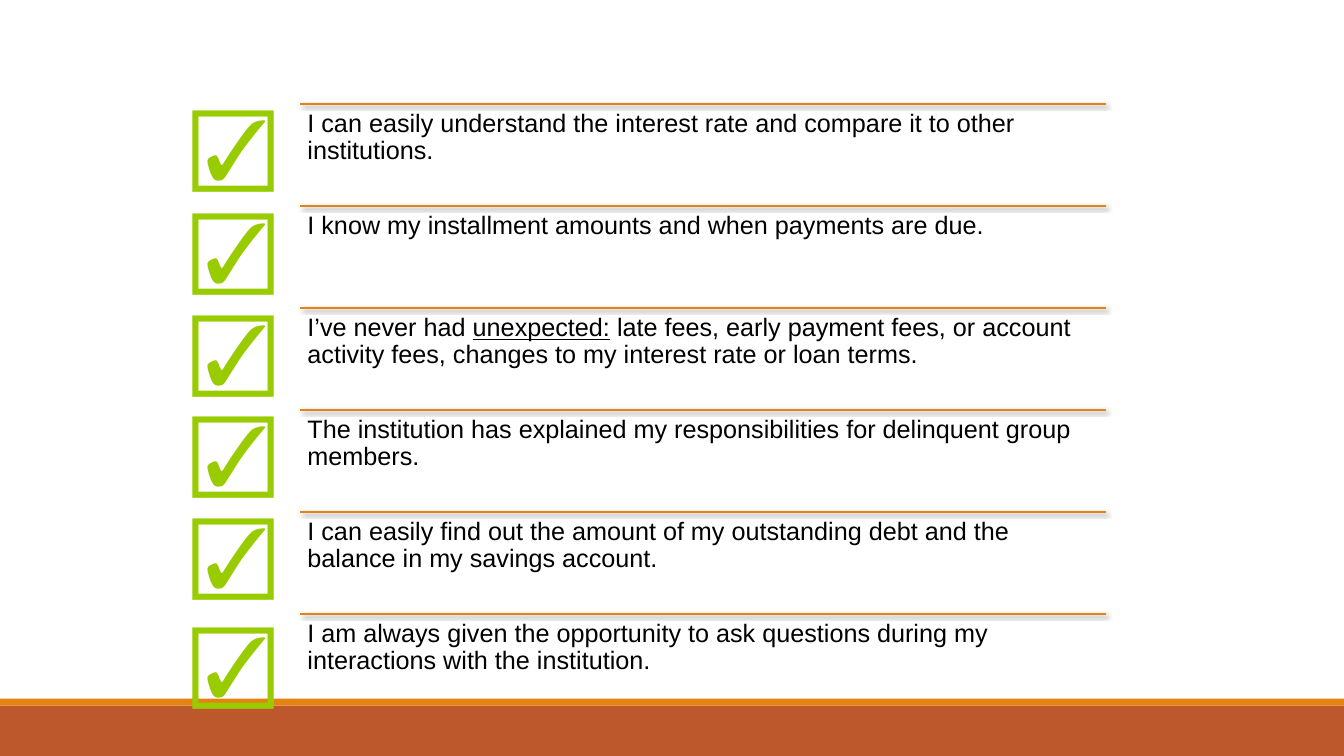
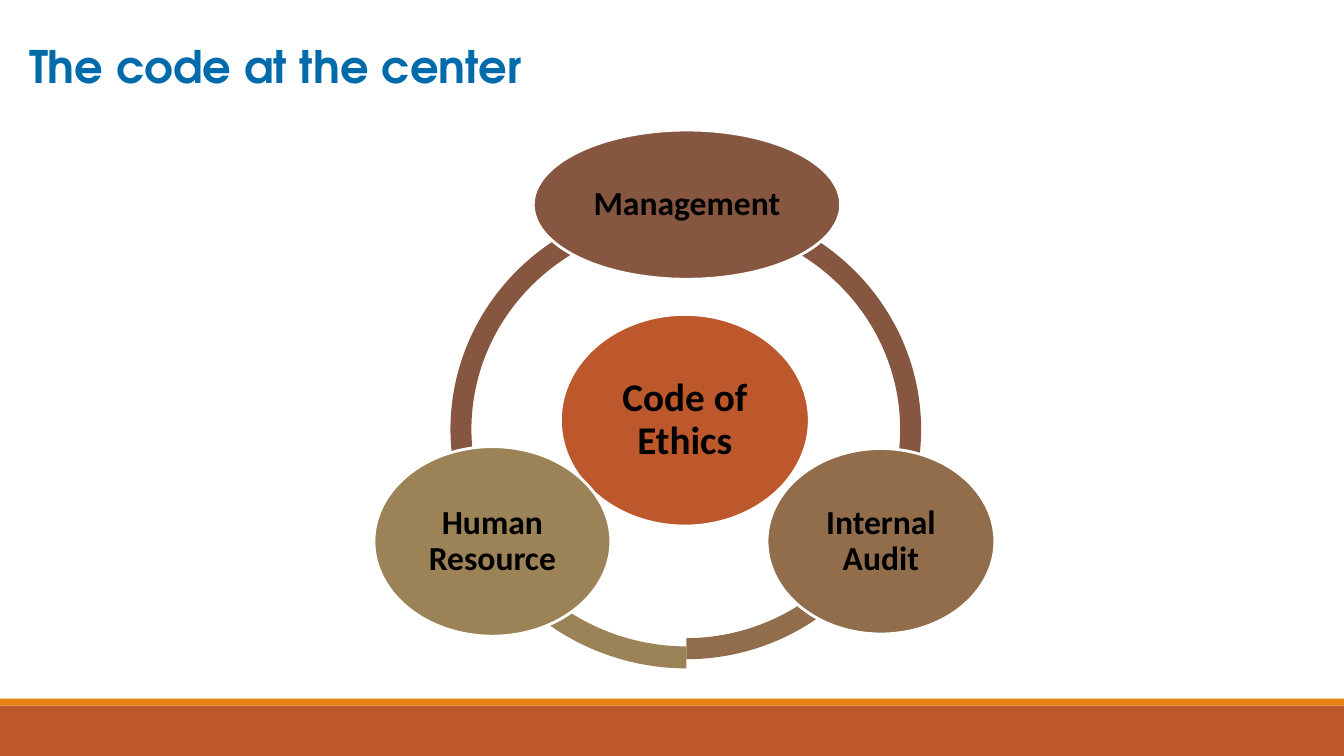
"""Build a borrower checklist slide and a code of ethics diagram slide."""
import dataclasses
import typing

import lxml.etree
import pptx
import pptx.dml.color
import pptx.enum.shapes
import pptx.enum.text
import pptx.oxml.ns
import pptx.presentation
import pptx.shapes.autoshape
import pptx.slide
import pptx.text.text
import pptx.util

Pt = pptx.util.Pt
SHAPES = pptx.enum.shapes.MSO_SHAPE
ANCHOR = pptx.enum.text.MSO_ANCHOR
ALIGN = pptx.enum.text.PP_ALIGN

WIDTH, HEIGHT = 960, 540
BLACK, WHITE = "000000", "FFFFFF"
RUST, ORANGE, GREEN, BLUE = "BD582C", "E48312", "99CC00", "006BAA"
BROWN, TAN, OLIVE = "865640", "916D4B", "9B8357"

ROW_LEFT, ROW_TOP, ROW_WIDTH, ROW_PITCH = 214.6, 74.2, 575.3, 72.86
CHECK_LEFT, CHECK_WIDTH, CHECK_HEIGHT = 130, 68.4, 80


@dataclasses.dataclass(frozen=True)
class Box:
    """Place and size in points."""
    left: float
    top: float
    width: float
    height: float

    def lengths(self) -> list[pptx.util.Length]:
        """Return the four lengths in the order that shapes take them."""
        return [Pt(value) for value in dataclasses.astuple(self)]


@dataclasses.dataclass(frozen=True)
class Span:
    """Run of text, underlined or not."""
    text: str
    underline: bool = False


@dataclasses.dataclass(frozen=True)
class Style:
    """Font of a paragraph."""
    name: str
    size: float
    color: str
    bold: bool = False


@dataclasses.dataclass(frozen=True)
class Statement:
    """Checklist row with the top of its check mark."""
    check_top: float
    spans: tuple[Span, ...]


@dataclasses.dataclass(frozen=True)
class Arc:
    """Ring segment with its start and end in degrees."""
    box: Box
    start: float
    end: float
    color: str


@dataclasses.dataclass(frozen=True)
class Node:
    """Labelled ellipse of the diagram."""
    box: Box
    label: str
    color: str
    size: float = 24
    inset: float = 2


BANDS = ((Box(0, 504, WIDTH, 36), RUST), (Box(0, 499, WIDTH, 5), ORANGE))
TITLE_STYLE = Style("TeX Gyre Adventor", 32, BLUE, True)
ROW_STYLE = Style("Arial", 18, BLACK)
CHECK_STYLE = Style("Arial", 60, GREEN)

STATEMENTS = (
    Statement(61.9, (Span("I can easily understand the interest rate and compare it to other institutions."),)),
    Statement(135.4, (Span("I know my installment amounts and when payments are due."),)),
    Statement(208.1, (
        Span("I’ve never had "),
        Span("unexpected:", True),
        Span(" late fees, early payment fees, or account activity fees, "
             "changes to my interest rate or loan terms."),
    )),
    Statement(280.1, (Span("The institution has explained my responsibilities for delinquent group members."),)),
    Statement(353.5, (Span("I can easily find out the amount of my outstanding debt "
                           "and the balance in my savings account."),)),
    Statement(431.3, (Span("I am always given the opportunity to ask questions "
                           "during my interactions with the institution."),)),
)

ARCS = (
    Arc(Box(319.7, 135.4, 341.3, 342), 90, 162, OLIVE),
    Arc(Box(326.2, 142.6, 328.3, 328.3), 18, 90, TAN),
    Arc(Box(321.8, 144, 336.2, 325.4), 162, 18, BROWN),
)
NODES = (
    Node(Box(400.3, 224.6, 177.8, 151.2), "Code of Ethics", RUST, 28, 3),
    Node(Box(380.9, 92.9, 219.6, 106.6), "Management", BROWN),
    Node(Box(547.9, 320.4, 162.7, 132.5), "Internal Audit", TAN),
    Node(Box(267.1, 319, 169.2, 135.4), "Human Resource", OLIVE),
)


def color_of(value: str) -> pptx.dml.color.RGBColor:
    """Turn a hex string into a colour."""
    return pptx.dml.color.RGBColor.from_string(value)


def set_values(target: typing.Any, values: dict[str, typing.Any]) -> None:
    """Set each named attribute of an object."""
    for name, value in values.items():
        setattr(target, name, value)


def inset_values(inset: float) -> dict[str, pptx.util.Length]:
    """Give all four margins of a text frame one value."""
    return {f"margin_{side}": Pt(inset) for side in ("left", "top", "right", "bottom")}


def write(frame: pptx.text.text.TextFrame, spans: tuple[Span, ...], style: Style,
          frame_values: dict[str, typing.Any], para_values: dict[str, typing.Any]) -> None:
    """Write one paragraph into a text frame."""
    set_values(frame, {"word_wrap": True} | frame_values)
    para = frame.paragraphs[0]
    set_values(para, para_values)
    for span in spans:
        run = para.add_run()
        run.text = span.text
        set_values(run.font, {"name": style.name, "size": Pt(style.size),
                              "bold": style.bold, "underline": span.underline})
        run.font.color.rgb = color_of(style.color)


def add_text(slide: pptx.slide.Slide, box: Box, spans: tuple[Span, ...], style: Style,
             frame_values: dict[str, typing.Any] | None = None,
             para_values: dict[str, typing.Any] | None = None) -> None:
    """Add a text box with one paragraph."""
    frame = slide.shapes.add_textbox(*box.lengths()).text_frame
    write(frame, spans, style, frame_values or {}, para_values or {})


def add_filled(slide: pptx.slide.Slide, kind: SHAPES, box: Box, color: str,
               outline: str | None = None) -> pptx.shapes.autoshape.Shape:
    """Add a flat shape, outlined when an outline colour is given."""
    shape = slide.shapes.add_shape(kind, *box.lengths())
    shape.shadow.inherit = False
    shape.fill.solid()
    shape.fill.fore_color.rgb = color_of(color)
    if outline:
        shape.line.color.rgb = color_of(outline)
        shape.line.width = Pt(2)
    else:
        shape.line.fill.background()
    return shape


def add_rule(slide: pptx.slide.Slide, left: float, top: float, width: float) -> None:
    """Add a thin horizontal rule with a soft shadow."""
    rule = slide.shapes.add_connector(
        pptx.enum.shapes.MSO_CONNECTOR.STRAIGHT, Pt(left), Pt(top), Pt(left + width), Pt(top))
    rule.line.color.rgb = color_of(ORANGE)
    rule.line.width = Pt(1)
    parent = rule._element.spPr
    for tag, values in (
        ("a:effectLst", {}),
        ("a:outerShdw", {"blurRad": str(Pt(3)), "dist": str(Pt(2)),
                         "dir": str(45 * 60000), "rotWithShape": "0"}),
        ("a:srgbClr", {"val": BLACK}),
        ("a:alpha", {"val": "60000"}),
    ):
        parent = lxml.etree.SubElement(parent, pptx.oxml.ns.qn(tag), values)


def add_page(deck: pptx.presentation.Presentation) -> pptx.slide.Slide:
    """Add a blank page with the bottom bands."""
    page = deck.slides.add_slide(deck.slide_layouts[6])
    for box, color in BANDS:
        add_filled(page, SHAPES.RECTANGLE, box, color)
    return page


def build_checklist(deck: pptx.presentation.Presentation) -> None:
    """Build the page of checked statements."""
    page = add_page(deck)
    check_values = {"word_wrap": False,
                    "auto_size": pptx.enum.text.MSO_AUTO_SIZE.SHAPE_TO_FIT_TEXT}
    for index, statement in enumerate(STATEMENTS):
        top = ROW_TOP + index * ROW_PITCH
        add_rule(page, ROW_LEFT, top, ROW_WIDTH)
        add_text(page, Box(ROW_LEFT, top, ROW_WIDTH, ROW_PITCH), statement.spans, ROW_STYLE,
                 inset_values(5), {"line_spacing": 0.9})
        add_text(page, Box(CHECK_LEFT, statement.check_top, CHECK_WIDTH, CHECK_HEIGHT),
                 (Span("☑"),), CHECK_STYLE, check_values)


def build_diagram(deck: pptx.presentation.Presentation) -> None:
    """Build the page with the ring around the code."""
    page = add_page(deck)
    add_text(page, Box(13.7, 23.8, 710, 44.6), (Span("The code at the center"),), TITLE_STYLE)
    for arc in ARCS:
        ring = add_filled(page, SHAPES.BLOCK_ARC, arc.box, arc.color)
        for index, value in enumerate((arc.start * 0.6, arc.end * 0.6, 0.046)):
            ring.adjustments[index] = value
    for node in NODES:
        ellipse = add_filled(page, SHAPES.OVAL, node.box, node.color, WHITE)
        write(ellipse.text_frame, (Span(node.label),), Style("Calibri", node.size, BLACK, True),
              {"vertical_anchor": ANCHOR.MIDDLE} | inset_values(node.inset),
              {"alignment": ALIGN.CENTER, "line_spacing": 0.9})


def main() -> None:
    """Build and save the deck."""
    deck = pptx.Presentation()
    set_values(deck, {"slide_width": Pt(WIDTH), "slide_height": Pt(HEIGHT)})
    build_checklist(deck)
    build_diagram(deck)
    deck.save("out.pptx")


if __name__ == "__main__":
    main()
